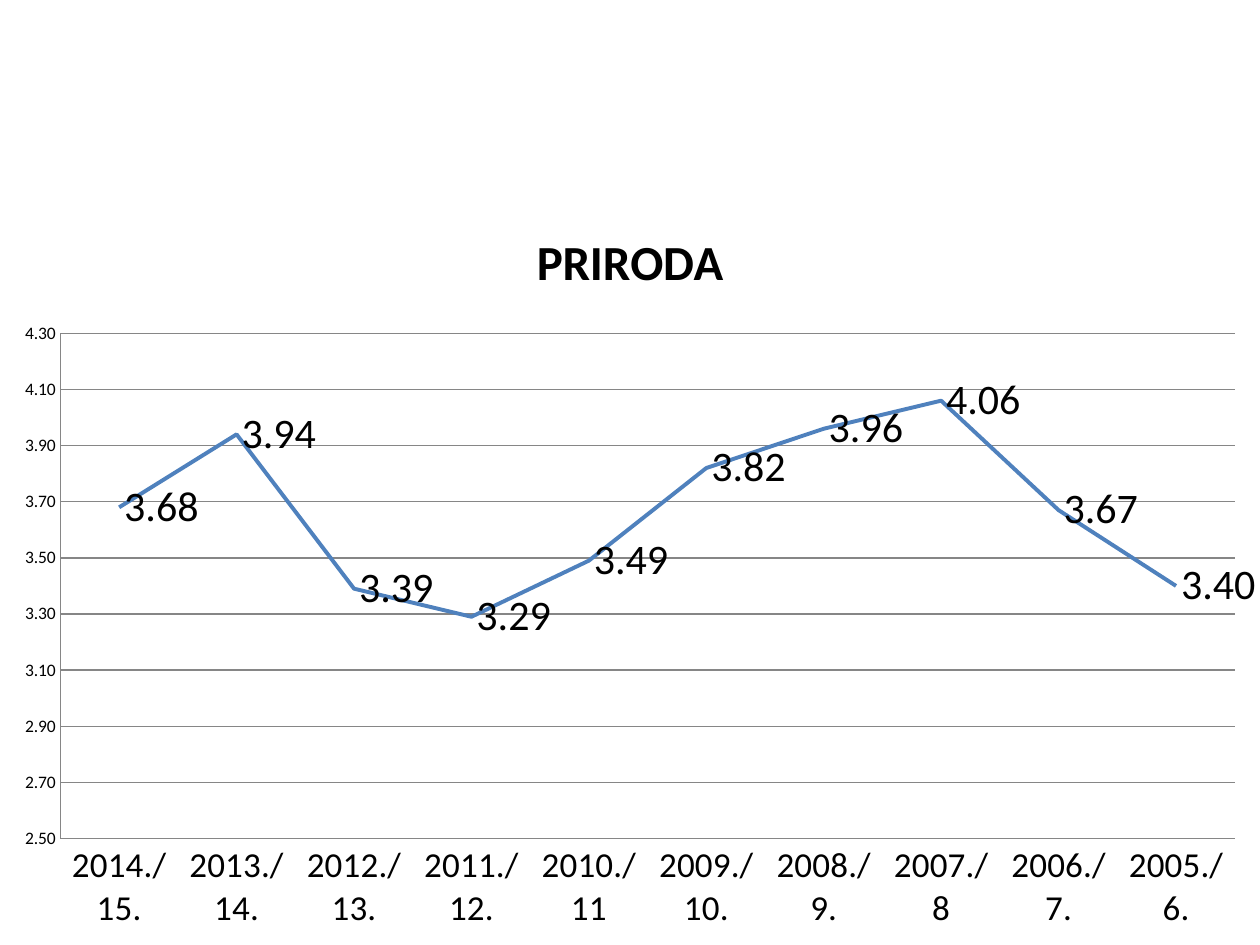
import pptx
import pptx.util
import pptx.chart.data
import pptx.dml.color
import pptx.enum.chart

Pt = pptx.util.Pt
enums = pptx.enum.chart

TITLE = "PRIRODA"
MARKS = [
    ("2014./15.", 3.68), ("2013./14.", 3.94), ("2012./13.", 3.39),
    ("2011./12.", 3.29), ("2010./11", 3.49), ("2009./10.", 3.82),
    ("2008./9.", 3.96), ("2007./8", 4.06), ("2006./7.", 3.67),
    ("2005./6.", 3.40),
]
BLACK, BLUE, GRAY = "000000", "4F81BD", "868686"
FORMAT = "0.00"


def tint(target, color):
    target.rgb = pptx.dml.color.RGBColor.from_string(color)


def style(font, size, bold=False):
    font.name = "Calibri"
    font.size = Pt(size)
    font.bold = bold
    tint(font.color, BLACK)


def rule(line, color, width):
    tint(line.color, color)
    line.width = Pt(width)


deck = pptx.Presentation()
deck.slide_width = pptx.util.Inches(10)
deck.slide_height = pptx.util.Inches(7.5)
slide = deck.slides.add_slide(deck.slide_layouts[6])

data = pptx.chart.data.CategoryChartData(number_format=FORMAT)
data.categories = [year for year, mark in MARKS]
data.add_series("Series 1", [mark for year, mark in MARKS])
top = int(deck.slide_height * 0.21)
chart = slide.shapes.add_chart(
    enums.XL_CHART_TYPE.LINE, 0, top,
    deck.slide_width, deck.slide_height - top, data).chart
style(chart.font, 10)
chart.has_legend = False

chart.has_title = True
title = chart.chart_title.text_frame.paragraphs[0].add_run()
title.text = TITLE
style(title.font, 28, True)
chart.chart_title.include_in_layout = False

years, marks = chart.category_axis, chart.value_axis
for axis, size in ((years, 20), (marks, 10)):
    axis.major_tick_mark = axis.minor_tick_mark = enums.XL_TICK_MARK.NONE
    style(axis.tick_labels.font, size)
    rule(axis.format.line, GRAY, 0.75)
marks.minimum_scale, marks.maximum_scale = 2.5, 4.3
marks.major_unit = 0.2
marks.has_major_gridlines = True
rule(marks.major_gridlines.format.line, GRAY, 0.75)
marks.tick_labels.number_format = FORMAT
marks.tick_labels.number_format_is_linked = False

plot = chart.plots[0]
plot.vary_by_categories = False
series = plot.series[0]
series.smooth = False
series.marker.style = enums.XL_MARKER_STYLE.NONE
rule(series.format.line, BLUE, 2.25)
labels = series.data_labels
labels.show_value = True
labels.number_format = FORMAT
labels.number_format_is_linked = False
labels.position = enums.XL_LABEL_POSITION.RIGHT
style(labels.font, 24)

deck.save("out.pptx")
